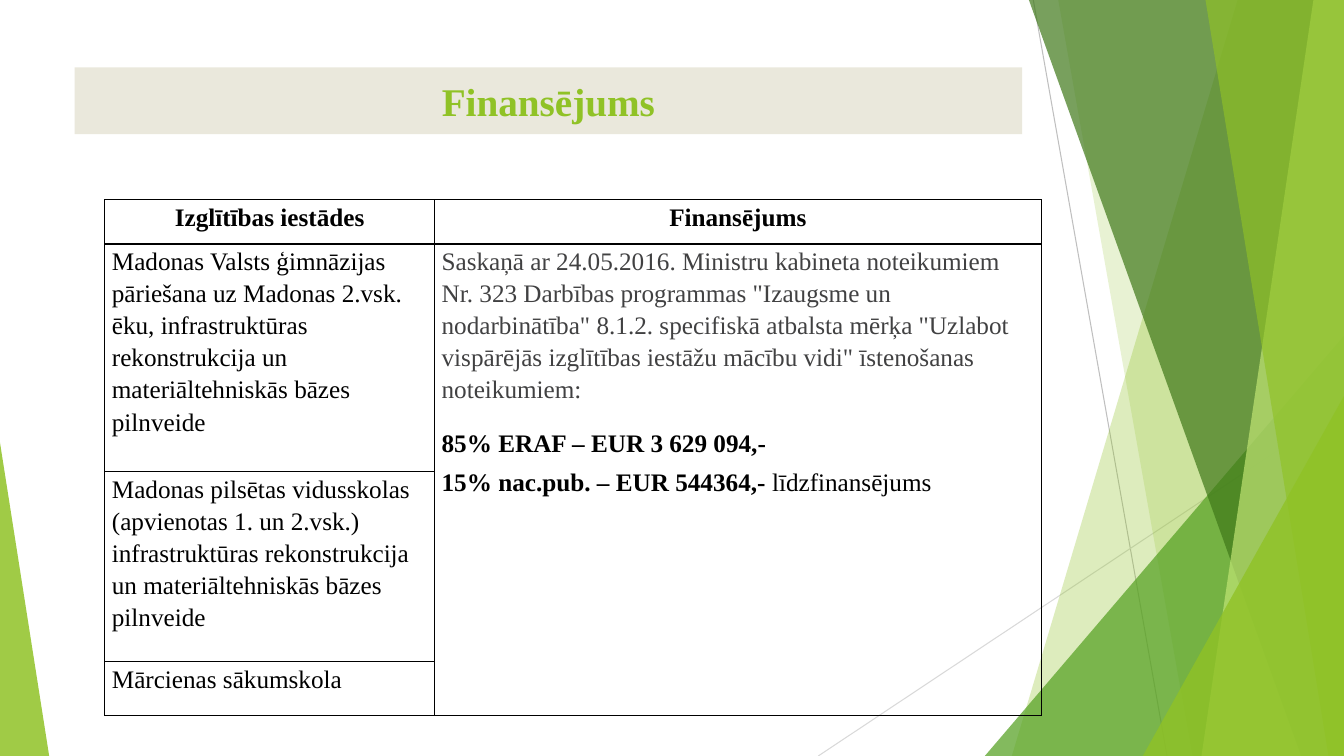
import dataclasses
import lxml.etree
import pptx
import pptx.dml.color
import pptx.enum.shapes
import pptx.enum.text
import pptx.oxml.ns
import pptx.util

Cm = pptx.util.Cm
Pt = pptx.util.Pt
qn = pptx.oxml.ns.qn
ALIGN = pptx.enum.text.PP_ALIGN
SHAPE = pptx.enum.shapes.MSO_SHAPE
WIDTH, HEIGHT = 33.87, 19.05


def rgb(value):
    return pptx.dml.color.RGBColor.from_string(value)


@dataclasses.dataclass(frozen=True)
class Theme:
    font: str = "Times New Roman"
    title_size: int = 28
    body_size: int = 18
    green: str = "90C226"
    leaf: str = "54A021"
    forest: str = "3F7819"
    lime: str = "C0E474"
    banner: str = "EAE8DC"
    black: str = "000000"
    grey: str = "414142"
    dark_line: str = "BFBFBF"
    light_line: str = "D9D9D9"


class Deck:
    def __init__(self, prs, theme):
        self.theme = theme
        self.s = prs.slides.add_slide(prs.slide_layouts[6])

    def paint(self, sp, color, alpha=100):
        sp.shadow.inherit = False
        sp.fill.solid()
        sp.fill.fore_color.rgb = rgb(color)
        sp.line.fill.background()
        if alpha < 100:
            clr = sp._element.spPr.find(".//" + qn("a:srgbClr"))
            lxml.etree.SubElement(clr, qn("a:alpha"), val=str(alpha * 1000))

    def line(self, x1, y1, x2, y2, color):
        sp = self.s.shapes.add_connector(
            pptx.enum.shapes.MSO_CONNECTOR.STRAIGHT, Cm(x1), Cm(y1), Cm(x2), Cm(y2))
        sp.line.color.rgb = rgb(color)
        sp.line.width = Pt(0.75)
        lxml.etree.SubElement(sp._element.spPr, qn("a:effectLst"))

    def band(self, top, bottom, color, alpha):
        builder = self.s.shapes.build_freeform(Cm(top), 0)
        corners = [(WIDTH, 0), (WIDTH, HEIGHT), (bottom, HEIGHT)]
        builder.add_line_segments([(Cm(x), Cm(y)) for x, y in corners])
        self.paint(builder.convert_to_shape(), color, alpha)

    def triangle(self, left, top, width, apex, color, alpha):
        sp = self.s.shapes.add_shape(
            SHAPE.ISOSCELES_TRIANGLE, Cm(left), Cm(top), Cm(width), Cm(HEIGHT - top))
        sp.adjustments[0] = apex
        self.paint(sp, color, alpha)

    def run(self, p, text, size, color, bold=False):
        r = p.add_run()
        r.text = text
        r.font.name = self.theme.font
        r.font.size = Pt(size)
        r.font.bold = bold
        r.font.color.rgb = rgb(color)

    def title(self, left, top, width, height, text):
        sp = self.s.shapes.add_shape(
            SHAPE.RECTANGLE, Cm(left), Cm(top), Cm(width), Cm(height))
        self.paint(sp, self.theme.banner)
        tf = sp.text_frame
        tf.word_wrap = True
        tf.vertical_anchor = pptx.enum.text.MSO_ANCHOR.MIDDLE
        p = tf.paragraphs[0]
        p.alignment = ALIGN.CENTER
        self.run(p, text, self.theme.title_size, self.theme.green, True)

    def table(self, left, top, widths, heights):
        table = self.s.shapes.add_table(
            len(heights), len(widths), Cm(left), Cm(top),
            Cm(sum(widths)), Cm(sum(heights))).table
        for column, width in zip(table.columns, widths):
            column.width = Cm(width)
        for row, height in zip(table.rows, heights):
            row.height = Cm(height)
        for cell in table.iter_cells():
            cell.fill.background()
            cell.margin_left = cell.margin_right = Cm(0.18)
            cell.margin_top = cell.margin_bottom = 0
            self.borders(cell)
        return table

    def borders(self, cell):
        tcPr = cell._tc.get_or_add_tcPr()
        for i, side in enumerate(("lnL", "lnR", "lnT", "lnB")):
            ln = lxml.etree.Element(qn("a:" + side), w=str(Pt(1)))
            fill = lxml.etree.SubElement(ln, qn("a:solidFill"))
            lxml.etree.SubElement(fill, qn("a:srgbClr"), val=self.theme.black)
            tcPr.insert(i, ln)

    def cell(self, cell, paragraphs):
        tf = cell.text_frame
        for i, (align, after, runs) in enumerate(paragraphs):
            p = tf.add_paragraph() if i else tf.paragraphs[0]
            p.alignment = align
            p.line_spacing = 1.15
            p.space_before = Pt(5 if i else 0)
            p.space_after = Pt(after)
            for text, color, bold in runs:
                self.run(p, text, self.theme.body_size, color, bold)


def main():
    prs = pptx.Presentation()
    prs.slide_width, prs.slide_height = Cm(WIDTH), Cm(HEIGHT)
    theme = Theme()
    deck = Deck(prs, theme)

    deck.line(26.04, 0, 29.41, HEIGHT, theme.dark_line)
    deck.line(WIDTH, 10.24, 20.62, HEIGHT, theme.light_line)
    deck.band(31.19, 25.5, theme.green, 30)
    deck.band(26.67, 30.05, theme.green, 20)
    deck.triangle(24.82, 8.46, 9.05, 1, theme.leaf, 72)
    deck.band(25.93, 32.79, theme.forest, 70)
    deck.band(33.1, 30.28, theme.lime, 70)
    deck.band(30.38, 33.48, theme.green, 65)
    deck.triangle(28.8, 9.98, 5.07, 1, theme.green, 80)
    deck.triangle(0, 11.15, 1.24, 0, theme.green, 85)

    deck.title(1.88, 1.7, 23.88, 1.68, "Finansējums")

    table = deck.table(2.64, 5.03, [8.31, 15.29], [1.12, 5.74, 4.78, 1.35])
    table.cell(1, 1).merge(table.cell(3, 1))
    for col, heading in enumerate(("Izglītības iestādes", "Finansējums")):
        deck.cell(table.cell(0, col),
                  [(ALIGN.CENTER, 0, [(heading, theme.black, True)])])
    schools = [
        "Madonas Valsts ģimnāzijas pāriešana uz Madonas 2.vsk. ēku, infrastruktūras "
        "rekonstrukcija un materiāltehniskās bāzes pilnveide",
        "Madonas pilsētas vidusskolas (apvienotas 1. un 2.vsk.) infrastruktūras "
        "rekonstrukcija un materiāltehniskās bāzes pilnveide",
        "Mārcienas sākumskola",
    ]
    for row, school in enumerate(schools, 1):
        deck.cell(table.cell(row, 0),
                  [(ALIGN.LEFT, 0, [(school, theme.black, False)])])
    rules = (
        "Saskaņā ar 24.05.2016. Ministru kabineta noteikumiem Nr. 323 Darbības "
        'programmas "Izaugsme un nodarbinātība" 8.1.2. specifiskā atbalsta mērķa '
        '"Uzlabot vispārējās izglītības iestāžu mācību vidi" īstenošanas noteikumiem:')
    deck.cell(table.cell(1, 1), [
        (ALIGN.LEFT, 10, [(rules, theme.grey, False)]),
        (ALIGN.JUSTIFY, 0, [("85% ERAF – EUR 3 629 094,-", theme.black, True)]),
        (ALIGN.JUSTIFY, 0, [("15% nac.pub. – EUR 544364,- ", theme.black, True),
                            ("līdzfinansējums", theme.black, False)]),
    ])

    prs.save("out.pptx")


if __name__ == "__main__":
    main()
